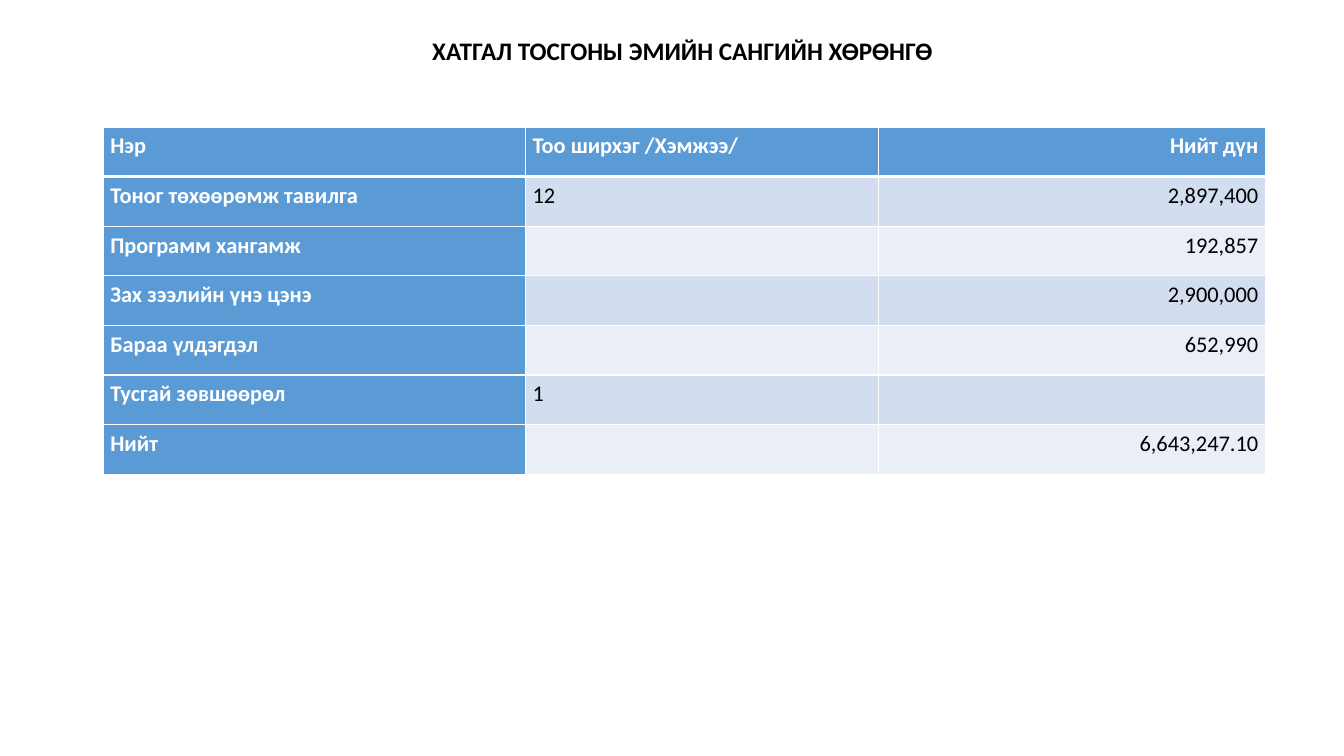
from lxml import etree
from pptx import Presentation
from pptx import util as u
from pptx.dml.color import RGBColor
from pptx.enum import text
from pptx.oxml import ns

FONT = "Calibri"
WHITE, BLACK, BLUE = "FFFFFF", "000000", "5B9BD5"
BANDS = ["D2DEEF", "EAEFF7"]


def add_span(para, words, size, colour, bold):
    span = para.add_run()
    span.text = words
    span.font.name = FONT
    span.font.size = u.Pt(size)
    span.font.bold = bold
    span.font.color.rgb = RGBColor.from_string(colour)


def add_border(cell, side, points):
    line = etree.SubElement(cell._tc.get_or_add_tcPr(), ns.qn("a:" + side),
                            w=str(u.Pt(points)))
    fill = etree.SubElement(line, ns.qn("a:solidFill"))
    etree.SubElement(fill, ns.qn("a:srgbClr"), val=WHITE)


deck = Presentation()
deck.slide_width, deck.slide_height = u.Cm(33.87), u.Cm(19.05)
page = deck.slides.add_slide(deck.slide_layouts[5])

# Title
title = page.shapes.title
title.left, title.top = u.Cm(4.5), u.Cm(0.84)
title.width, title.height = u.Cm(25.4), u.Cm(1.42)
title.text_frame.word_wrap = True
title.text_frame.auto_size = text.MSO_AUTO_SIZE.NONE
title.text_frame.vertical_anchor = text.MSO_ANCHOR.TOP
para = title.text_frame.paragraphs[0]
para.alignment = text.PP_ALIGN.CENTER
para.line_spacing = 0.9
add_span(para, "ХАТГАЛ ТОСГОНЫ ЭМИЙН САНГИЙН ХӨРӨНГӨ", 18, BLACK, True)

# Asset table
assets = [
    ("Нэр", "Тоо ширхэг /Хэмжээ/", "Нийт дүн"),
    ("Тоног төхөөрөмж тавилга", "12", "2,897,400"),
    ("Программ хангамж", "", "192,857"),
    ("Зах зээлийн үнэ цэнэ", "", "2,900,000"),
    ("Бараа үлдэгдэл", "", "652,990"),
    ("Тусгай зөвшөөрөл", "1", ""),
    ("Нийт", "", "6,643,247.10"),
]
widths = [10.64, 8.9, 9.75]
row_height = 1.25
table = page.shapes.add_table(
    len(assets), len(widths), u.Cm(2.6), u.Cm(3.2),
    u.Cm(sum(widths)), u.Cm(row_height * len(assets))).table
table.first_col = True
for column, width in zip(table.columns, widths):
    column.width = u.Cm(width)

for r, asset in enumerate(assets):
    table.rows[r].height = u.Cm(row_height)
    for c, words in enumerate(asset):
        cell = table.cell(r, c)
        heading = r == 0 or c == 0
        cell.margin_left = cell.margin_right = u.Cm(0.18)
        cell.margin_top = cell.margin_bottom = 0

        # White rules, with a thicker one below the header row
        add_border(cell, "lnL", 1)
        add_border(cell, "lnR", 1)
        add_border(cell, "lnT", 3 if r == 1 else 1)
        add_border(cell, "lnB", 3 if r == 0 else 1)
        cell.fill.solid()
        cell.fill.fore_color.rgb = RGBColor.from_string(
            BLUE if heading else BANDS[(r - 1) % 2])

        para = cell.text_frame.paragraphs[0]
        para.line_spacing = 1.2
        para.space_before = u.Pt(3)
        if c == 2:
            para.alignment = text.PP_ALIGN.RIGHT
        if words:
            add_span(para, words, 16, WHITE if heading else BLACK, heading)

deck.save("out.pptx")
